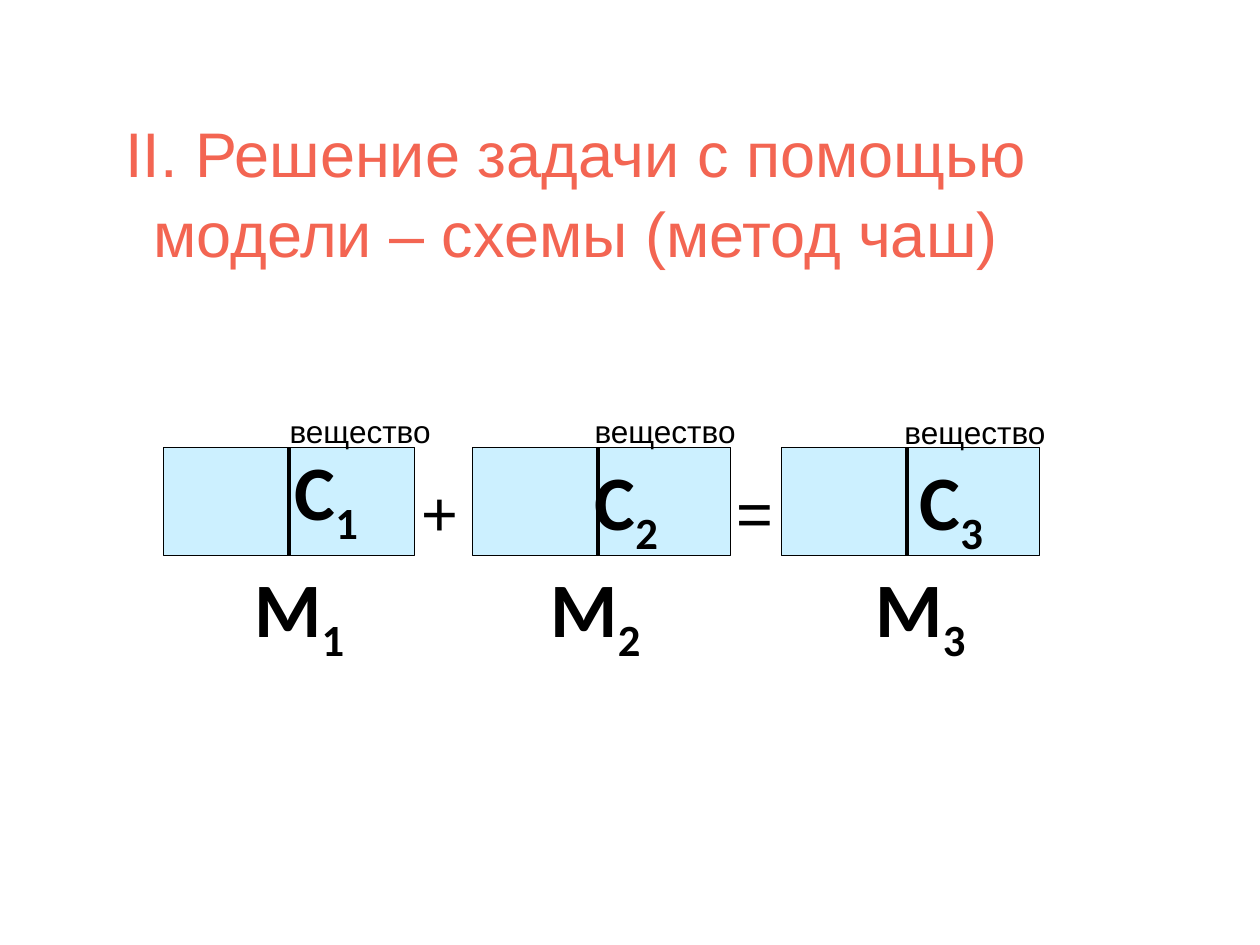
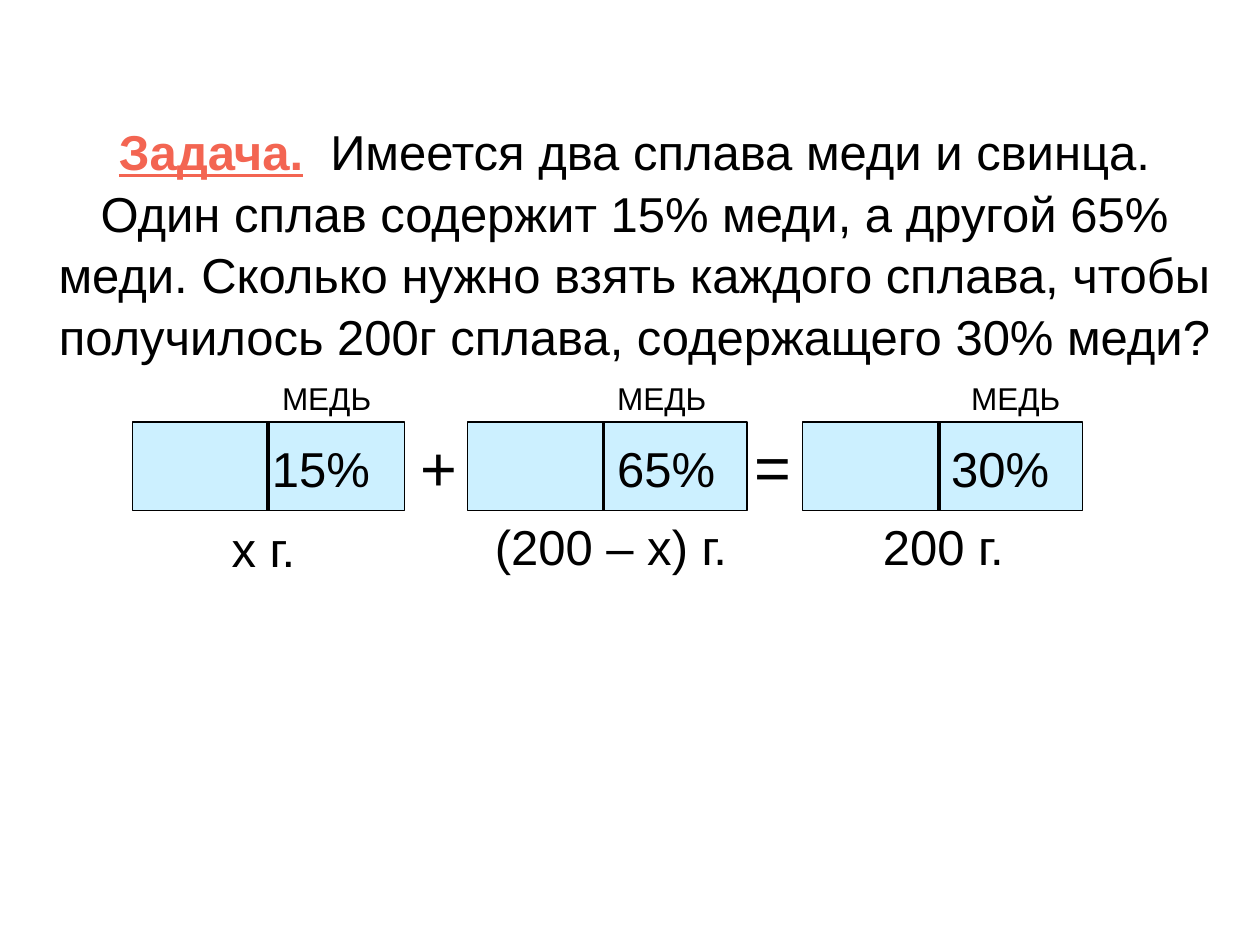
from lxml.etree import SubElement
from pptx import Presentation
from pptx.dml.color import RGBColor
from pptx.enum.shapes import MSO_CONNECTOR as Connector, MSO_SHAPE as Shape
from pptx.enum.text import MSO_ANCHOR as Anchor, MSO_AUTO_SIZE as AutoSize, PP_ALIGN as Align
from pptx.oxml.ns import qn
from pptx.util import Inches, Pt

CORAL = RGBColor(0xF3, 0x65, 0x52)
BLACK = RGBColor(0, 0, 0)
WATER = RGBColor(0x00, 0xB8, 0xFF)
WATER_ALPHA = 20

TITLE = dict(name="Arial", size=Pt(36), bold=False)
TASK = dict(TITLE, size=Pt(28))
SIGN = dict(name="Arial", size=Pt(36))
CAPTION = dict(SIGN, size=Pt(18))
AMOUNT = dict(SIGN, size=Pt(28))
SYMBOL = dict(name="Calibri", size=Pt(44), bold=True)


class Deck:
    def __init__(self):
        self.prs = Presentation()
        self.prs.slide_width, self.prs.slide_height = Inches(10), Inches(7.5)
        self.slide = None

    def styled_run(self, paragraph, text, style, color=BLACK):
        run = paragraph.add_run()
        run.text = text
        for key, value in style.items():
            setattr(run.font, key, value)
        run.font.color.rgb = color
        return run

    def titled_slide(self, box, pieces):
        """Start a slide; pieces are (text, style, color) runs of its title."""
        self.slide = self.prs.slides.add_slide(self.prs.slide_layouts[5])
        title = self.slide.shapes.title
        title.left, title.top, title.width, title.height = map(Inches, box)
        frame = title.text_frame
        frame.word_wrap, frame.auto_size = True, AutoSize.NONE
        frame.vertical_anchor = Anchor.TOP
        paragraph = frame.paragraphs[0]
        paragraph.alignment, paragraph.line_spacing = Align.CENTER, 1.05
        for piece in pieces:
            self.styled_run(paragraph, *piece)

    def label(self, box, text, style, subscript="", parent=None):
        holder = (parent or self.slide).shapes.add_textbox(*map(Inches, box))
        frame = holder.text_frame
        frame.word_wrap, frame.auto_size = True, AutoSize.SHAPE_TO_FIT_TEXT
        paragraph = frame.paragraphs[0]
        self.styled_run(paragraph, text, style)
        if subscript:
            index = self.styled_run(paragraph, subscript, style)
            index.font._element.set("baseline", "-25000")

    def labels(self, places, size, texts, style, subscripts=("", "", "")):
        for place, text, subscript in zip(places, texts, subscripts):
            self.label((*place, *size), text, style, subscript)

    def bowl(self, parent, left, top, width, height):
        bowl = parent.shapes.add_shape(Shape.RECTANGLE, *map(Inches, (left, top, width, height)))
        bowl.shadow.inherit = False
        bowl.fill.solid()
        bowl.fill.fore_color.rgb = WATER
        color = bowl._element.spPr.find(qn("a:solidFill"))[0]
        SubElement(color, qn("a:alpha"), val=str(WATER_ALPHA * 1000))
        bowl.line.color.rgb, bowl.line.width = BLACK, Pt(0.75)

    def divider(self, parent, x, top, height):
        line = parent.shapes.add_connector(
            Connector.STRAIGHT, *map(Inches, (x, top, x, top + height)))
        line.line.color.rgb, line.line.width = BLACK, Pt(2.25)
        SubElement(line._element.spPr, qn("a:effectLst"))

    def bowls(self, left, top, width, height, pitch, signs):
        """Draw three split bowls joined by signs; the last two are a little wider."""
        group = self.slide.shapes.add_group_shape()
        lefts = [left + i * pitch for i in range(3)]
        for i, x in enumerate(lefts):
            self.bowl(group, x, top, width + (0.06 if i else 0), height)
        for text, box in zip("+=", signs):
            self.label(box, text, SIGN, parent=group)
        for x in lefts:
            self.divider(group, x + width / 2, top, height)


def method_slide(deck):
    deck.titled_slide((0.24, 0.83, 8.66, 2.3), [
        ("II. Решение задачи с помощью модели – схемы (метод чаш)", TITLE, CORAL)])
    deck.bowls(1.3, 3.55, 1.99, 0.86, 2.45,
               [(3.25, 3.71, 0.35, 0.49), (5.75, 3.71, 0.53, 0.49)])
    deck.labels([(2.2, 3.22), (4.62, 3.22), (7.08, 3.23)], (1.41, 0.4),
                ["вещество"] * 3, CAPTION)
    deck.labels([(2.24, 3.47), (4.62, 3.55), (7.2, 3.55)], (1, 0.84), "ССС", SYMBOL, "123")
    deck.labels([(1.92, 4.4), (4.27, 4.4), (6.85, 4.4)], (1.02, 0.84), "МММ", SYMBOL, "123")


def alloy_slide(deck):
    deck.titled_slide((0.35, 0.89, 9.37, 2.11), [
        ("Задача.", dict(TASK, bold=True, underline=True), CORAL),
        ("  ", TASK, CORAL),
        ("Имеется два сплава меди и свинца. Один сплав содержит 15% меди, "
         "а другой 65% меди. Сколько нужно взять каждого сплава, чтобы "
         "получилось 200г сплава, содержащего 30% меди?", TASK, BLACK)])
    deck.bowls(1.05, 3.35, 2.16, 0.7, 2.66,
               [(3.24, 3.35, 0.38, 0.4), (5.89, 3.34, 0.57, 0.4)])
    deck.labels([(2.14, 2.96), (4.8, 2.96), (7.61, 2.96)], (1.17, 0.4), ["МЕДЬ"] * 3, CAPTION)
    deck.labels([(2.06, 3.43), (4.8, 3.43), (7.45, 3.43)], (1.17, 0.57),
                ["15%", "65%", "30%"], AMOUNT)
    deck.labels([(1.74, 4.07), (3.83, 4.05), (6.91, 4.05)], (2.34, 0.57),
                ["х г.", "(200 – х) г.", "200 г."], AMOUNT)


def main():
    deck = Deck()
    method_slide(deck)
    alloy_slide(deck)
    deck.prs.save("out.pptx")


if __name__ == "__main__":
    main()
